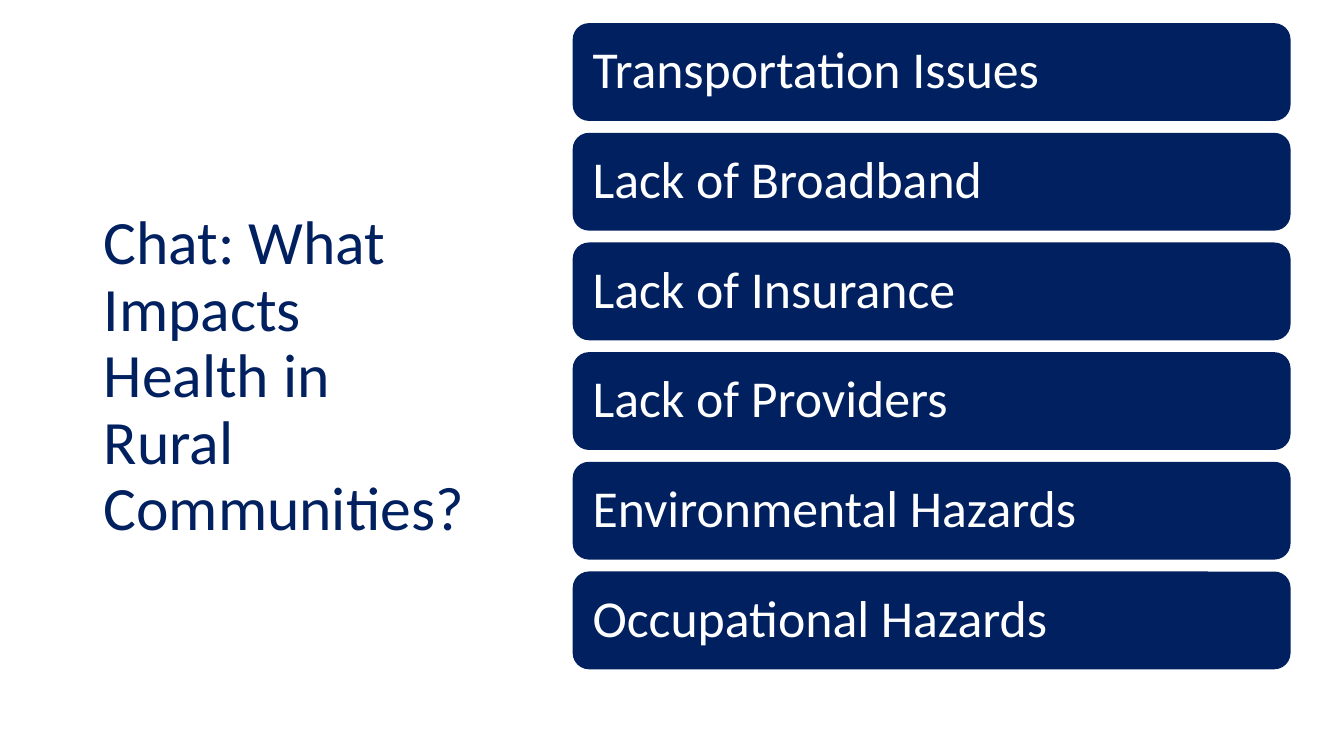
from pptx import Presentation
from pptx.dml.color import RGBColor
from pptx.enum.shapes import MSO_SHAPE
from pptx.enum.text import MSO_ANCHOR, PP_ALIGN
from pptx.util import Inches, Pt

NAVY = RGBColor(0x00, 0x20, 0x60)
WHITE = RGBColor(0xFF, 0xFF, 0xFF)
ROUND = MSO_SHAPE.ROUNDED_RECTANGLE
MIDDLE = MSO_ANCHOR.MIDDLE
LEFT = PP_ALIGN.LEFT

TITLE = "Chat: What Impacts Health in Rural Communities?"
ISSUES = [
    "Transportation Issues",
    "Lack of Broadband",
    "Lack of Insurance",
    "Lack of Providers",
    "Environmental Hazards",
    "Occupational Hazards",
]
TOP, LAST = 0.23, 5.67
STEP = (LAST - TOP) / (len(ISSUES) - 1)


class Deck:
    """Holds the text style and the current slide."""

    font = "Calibri"
    lead = 0.9

    def __init__(self, slide):
        self.shapes = slide.shapes

    def label(self, shape, text, size, color, inset):
        frame = shape.text_frame
        frame.text = text
        frame.word_wrap = True
        frame.vertical_anchor = MIDDLE
        frame.margin_left = frame.margin_right = Inches(inset)
        para = frame.paragraphs[0]
        para.alignment = LEFT
        para.line_spacing = self.lead
        font = para.runs[0].font
        font.name = self.font
        font.size = Pt(size)
        font.color.rgb = color

    def title(self, text, left, top, width, height):
        box = self.shapes.add_textbox(
            Inches(left), Inches(top), Inches(width), Inches(height))
        self.label(box, text, 44, NAVY, 0.1)

    def bar(self, text, left, top, width, height):
        bar = self.shapes.add_shape(
            ROUND, Inches(left), Inches(top), Inches(width), Inches(height))
        bar.shadow.inherit = False
        bar.fill.solid()
        bar.fill.fore_color.rgb = NAVY
        bar.line.fill.background()
        self.label(bar, text, 37, WHITE, 0.15)


def main():
    show = Presentation()
    show.slide_width = Inches(13.33)
    show.slide_height = Inches(7.5)
    deck = Deck(show.slides.add_slide(show.slide_layouts[6]))
    deck.title(TITLE, 0.93, 1.13, 3.8, 5.24)
    for row, issue in enumerate(ISSUES):
        deck.bar(issue, 5.68, TOP + row * STEP, 7.12, 0.97)
    show.save("out.pptx")


if __name__ == "__main__":
    main()
